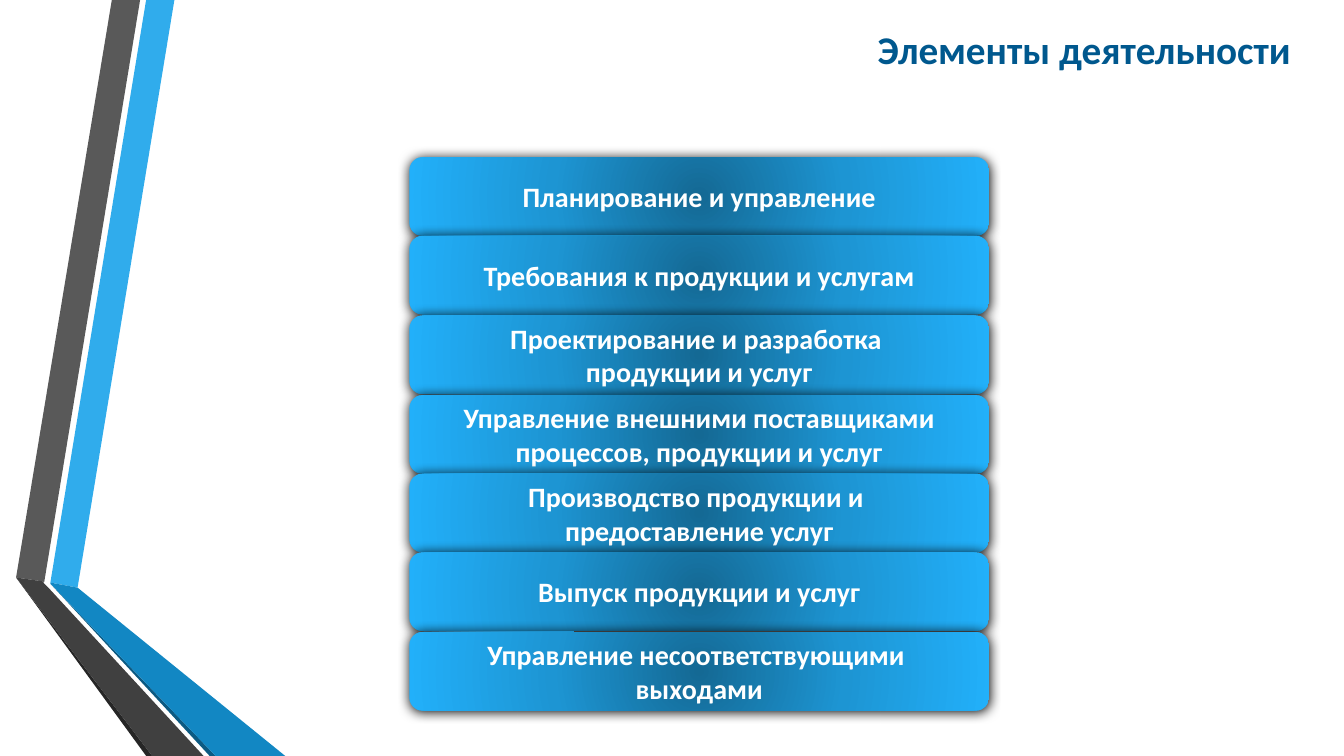
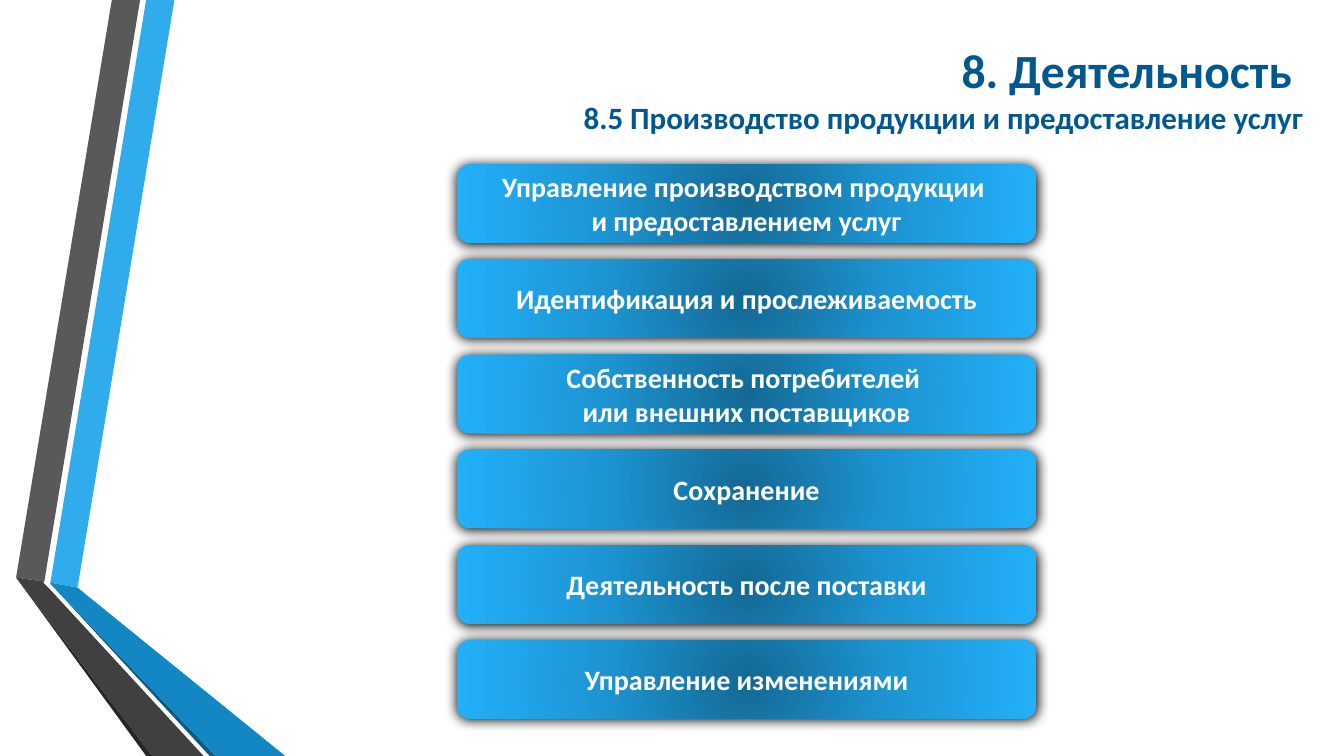
from dataclasses import dataclass

from pptx import Presentation
from pptx.dml.color import RGBColor
from pptx.enum.shapes import MSO_SHAPE
from pptx.enum.text import MSO_ANCHOR, MSO_AUTO_SIZE, PP_ALIGN
from pptx.oxml import parse_xml
from pptx.util import Pt

PX = 9144  # EMU in one px, 100 px to the inch
DRAWING = 'xmlns:a="http://schemas.openxmlformats.org/drawingml/2006/main"'


@dataclass(frozen=True)
class Theme:
    font: str = "Calibri"
    title: str = "00588E"
    button_text: str = "FFFFFF"
    button_stops: tuple = ((0, "146994"), (50, "1D95D3"), (100, "22B0FA"))
    shadow: str = "000000"
    title_size: float = 28
    section_size: float = 34
    subtitle_size: float = 22.1
    button_size: float = 20


THEME = Theme()

RIBBONS = [
    ("30ACEC", [(50, 578), (77, 583), (173, 0), (145, 0)]),
    ("595959", [(139, 0), (111, 0), (16, 573), (44, 577)]),
    ("262626", [(16, 573), (145, 750), (151, 750)]),
    ("0C5A82", [(50, 579), (208, 750), (214, 750)]),
    ("1287C3", [(50, 579), (214, 750), (283, 750), (77, 583), (50, 578)]),
    ("404040", [(202, 750), (48, 583), (43, 578), (44, 577), (16, 573), (151, 750)]),
]

BUTTON_WIDTH, BUTTON_HEIGHT = 575, 78

# Each title line is (text, size); buttons run evenly from first_top to last_top.
SLIDES = [
    {
        "title_box": (406, 23, 884, 50),
        "title": [("Элементы деятельности", THEME.title_size)],
        "left": 406,
        "first_top": 156,
        "last_top": 627,
        "buttons": [
            "Планирование и управление",
            "Требования к продукции и услугам",
            "Проектирование и разработка \nпродукции и услуг",
            "Управление внешними поставщиками\nпроцессов, продукции и услуг",
            "Производство продукции и \nпредоставление услуг",
            "Выпуск продукции и услуг",
            "Управление несоответствующими \nвыходами",
        ],
    },
    {
        "title_box": (318, 44, 984, 87),
        "title": [
            ("8. Деятельность ", THEME.section_size),
            ("8.5 Производство продукции и предоставление услуг", THEME.subtitle_size),
        ],
        "left": 453,
        "first_top": 163,
        "last_top": 635,
        "buttons": [
            "Управление производством продукции \nи предоставлением услуг",
            "Идентификация и прослеживаемость",
            "Собственность потребителей \nили внешних поставщиков",
            "Сохранение",
            "Деятельность после поставки",
            "Управление изменениями",
        ],
    },
]


def style_font(font, color):
    font.name = THEME.font
    font.bold = True
    font.color.rgb = RGBColor.from_string(color)


def add_button(page, left, top, text):
    """Add a rounded box with a radial gradient and a soft shadow."""
    button = page.shapes.add_shape(
        MSO_SHAPE.ROUNDED_RECTANGLE,
        left * PX, top * PX, BUTTON_WIDTH * PX, BUTTON_HEIGHT * PX,
    )
    button.adjustments[0] = 0.166
    button.line.fill.background()
    stops = "".join(
        f'<a:gs pos="{position * 1000}"><a:srgbClr val="{color}"/></a:gs>'
        for position, color in THEME.button_stops
    )
    gradient = parse_xml(
        f'<a:gradFill {DRAWING} rotWithShape="1"><a:gsLst>{stops}</a:gsLst>'
        '<a:path path="circle"><a:fillToRect l="50000" t="50000" r="50000" b="50000"/>'
        "</a:path></a:gradFill>"
    )
    effects = parse_xml(
        f'<a:effectLst {DRAWING}><a:outerShdw blurRad="{Pt(8.5)}" dist="{Pt(1)}" '
        'dir="5400000" algn="ctr" rotWithShape="0">'
        f'<a:srgbClr val="{THEME.shadow}"/></a:outerShdw></a:effectLst>'
    )
    properties = button.element.spPr
    properties.insert(2, gradient)  # the fill follows the position and the geometry
    properties.append(effects)

    frame = button.text_frame
    frame.text = text
    frame.word_wrap = False
    frame.vertical_anchor = MSO_ANCHOR.MIDDLE
    for para in frame.paragraphs:
        para.alignment = PP_ALIGN.CENTER
        para.font.size = Pt(THEME.button_size)
        style_font(para.font, THEME.button_text)


deck = Presentation()
deck.slide_width = 1333 * PX
deck.slide_height = 750 * PX
layout = deck.slide_layouts.get_by_name("Title Only")
pages = [deck.slides.add_slide(layout) for _ in SLIDES]

# Layouts cannot create shapes, so the ribbons are built on a page and moved.
ribbon_group = pages[0].shapes.add_group_shape()
for color, points in RIBBONS:
    builder = ribbon_group.shapes.build_freeform(*points[0], scale=PX)
    builder.add_line_segments(points[1:], close=True)
    ribbon = builder.convert_to_shape()
    ribbon.fill.solid()
    ribbon.fill.fore_color.rgb = RGBColor.from_string(color)
    ribbon.line.fill.background()
    ribbon.shadow.inherit = False
for number, label in enumerate(ribbon_group.element.xpath(".//p:cNvPr"), start=20):
    label.set("id", str(number))
layout.element.cSld.spTree.insert(2, ribbon_group.element)

for page, content in zip(pages, SLIDES):
    title = page.shapes.title
    title.left, title.top, title.width, title.height = (
        length * PX for length in content["title_box"]
    )
    frame = title.text_frame
    frame.word_wrap = True
    frame.auto_size = MSO_AUTO_SIZE.NONE
    frame.vertical_anchor = MSO_ANCHOR.MIDDLE
    para = frame.paragraphs[0]
    para.alignment = PP_ALIGN.RIGHT
    style_font(para.font, THEME.title)
    for index, (text, size) in enumerate(content["title"]):
        if index:
            para.add_line_break()
        span = para.add_run()
        span.text = text
        span.font.size = Pt(size)

    first_top, buttons = content["first_top"], content["buttons"]
    pitch = (content["last_top"] - first_top) / (len(buttons) - 1)
    for index, text in enumerate(buttons):
        add_button(page, content["left"], round(first_top + index * pitch), text)

deck.save("out.pptx")
